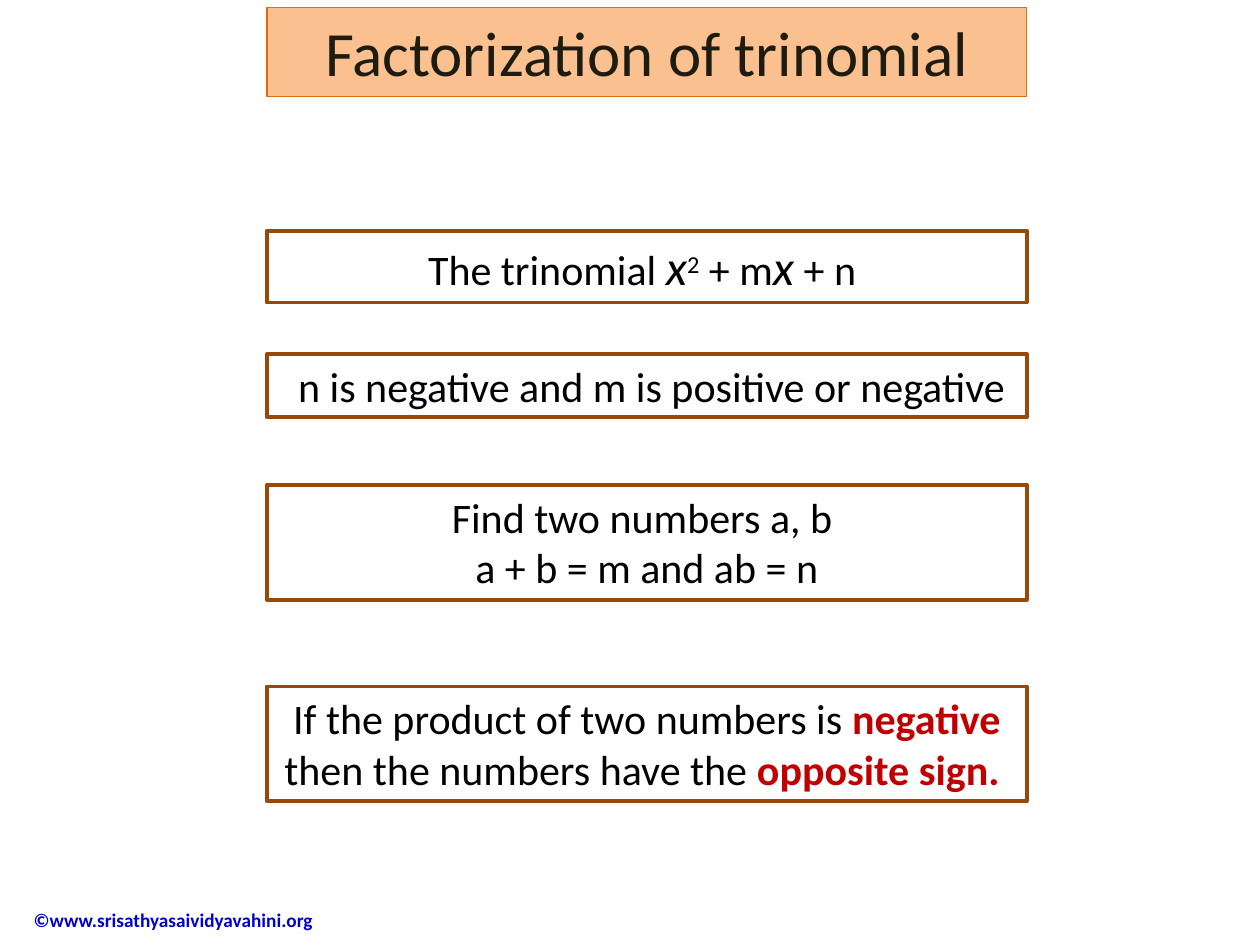
from pptx import Presentation
from pptx.dml.color import RGBColor
from pptx.enum.shapes import MSO_SHAPE as Shape
from pptx.enum.text import MSO_ANCHOR as Anchor, MSO_AUTO_SIZE as AutoSize, PP_ALIGN as Align
from pptx.util import Cm, Pt

FONT = "Calibri"
BLACK, BROWN, RED = "000000", "984807", "C00000"
COLUMN_LEFT, COLUMN_WIDTH = 5.38, 15.32

TITLE = "Factorization of trinomial"
COPYRIGHT = "©www.srisathyasaividyavahini.org"

# Each step: top and height in cm, fill, paragraphs of (text, style) pieces
STEPS = [
    (4.65, 1.45, "FFFFFF", [[("The trinomial ", "plain"), ("x", "variable"), ("2", "power"),
                             (" + m", "plain"), ("x", "variable"), (" + n ", "plain")]]),
    (7.14, 1.27, None, [[(" n is negative and m is positive or negative", "plain")]]),
    (9.78, 2.31, None, [[("Find two numbers a, b ", "plain")],
                        [("a + b = m and ab = n", "plain")]]),
    (13.84, 2.31, None, [[("If the product of two numbers is ", "plain"), ("negative", "key"),
                          (" then the numbers have the ", "plain"), ("opposite sign. ", "key")]]),
]


def rgb(value):
    return RGBColor.from_string(value)


def place(shape, left, top, width, height):
    shape.left, shape.top, shape.width, shape.height = map(Cm, (left, top, width, height))


def style_box(shape, fill, line, line_width):
    if fill:
        shape.fill.solid()
        shape.fill.fore_color.rgb = rgb(fill)
    else:
        shape.fill.background()
    shape.line.color.rgb = rgb(line)
    shape.line.width = Pt(line_width)


def set_frame(frame, anchor):
    frame.word_wrap = True
    frame.auto_size = AutoSize.NONE
    frame.vertical_anchor = anchor


def style_run(run, size, color, bold=False, italic=False):
    font = run.font
    font.name, font.size, font.bold, font.italic = FONT, Pt(size), bold, italic
    font.color.rgb = rgb(color)


def add_piece(paragraph, text, style):
    run = paragraph.add_run()
    run.text = text
    style_run(run, 28 if style == "variable" else 24, RED if style == "key" else BLACK,
              bold=style == "key", italic=style == "variable")
    if style == "power":
        run.font._element.set("baseline", "30000")


def add_step(slide, top, height, fill, paragraphs):
    box = slide.shapes.add_shape(Shape.RECTANGLE, 0, 0, 0, 0)
    place(box, COLUMN_LEFT, top, COLUMN_WIDTH, height)
    box.shadow.inherit = False
    style_box(box, fill, BROWN, 2.25)
    frame = box.text_frame
    set_frame(frame, Anchor.TOP)
    for number, pieces in enumerate(paragraphs):
        paragraph = frame.add_paragraph() if number else frame.paragraphs[0]
        paragraph.alignment = Align.CENTER
        for text, style in pieces:
            add_piece(paragraph, text, style)


def main():
    deck = Presentation()
    deck.slide_width, deck.slide_height = Cm(25.4), Cm(19.05)
    slide = deck.slides.add_slide(deck.slide_layouts[5])

    title = slide.shapes.title
    place(title, COLUMN_LEFT, 0.15, COLUMN_WIDTH, 1.8)
    style_box(title, "FAC090", "E46C0A", 0.75)
    title.text_frame.text = TITLE
    set_frame(title.text_frame, Anchor.TOP)
    title.text_frame.paragraphs[0].alignment = Align.CENTER
    style_run(title.text_frame.paragraphs[0].runs[0], 36, "1E1C11")

    for step in STEPS:
        add_step(slide, *step)

    footer = slide.shapes.add_textbox(Cm(0.43), Cm(18.03), Cm(6.4), Cm(1.04))
    footer.text_frame.text = COPYRIGHT
    set_frame(footer.text_frame, Anchor.MIDDLE)
    style_run(footer.text_frame.paragraphs[0].runs[0], 11, "0000CC", bold=True)

    deck.save("out.pptx")


if __name__ == "__main__":
    main()
